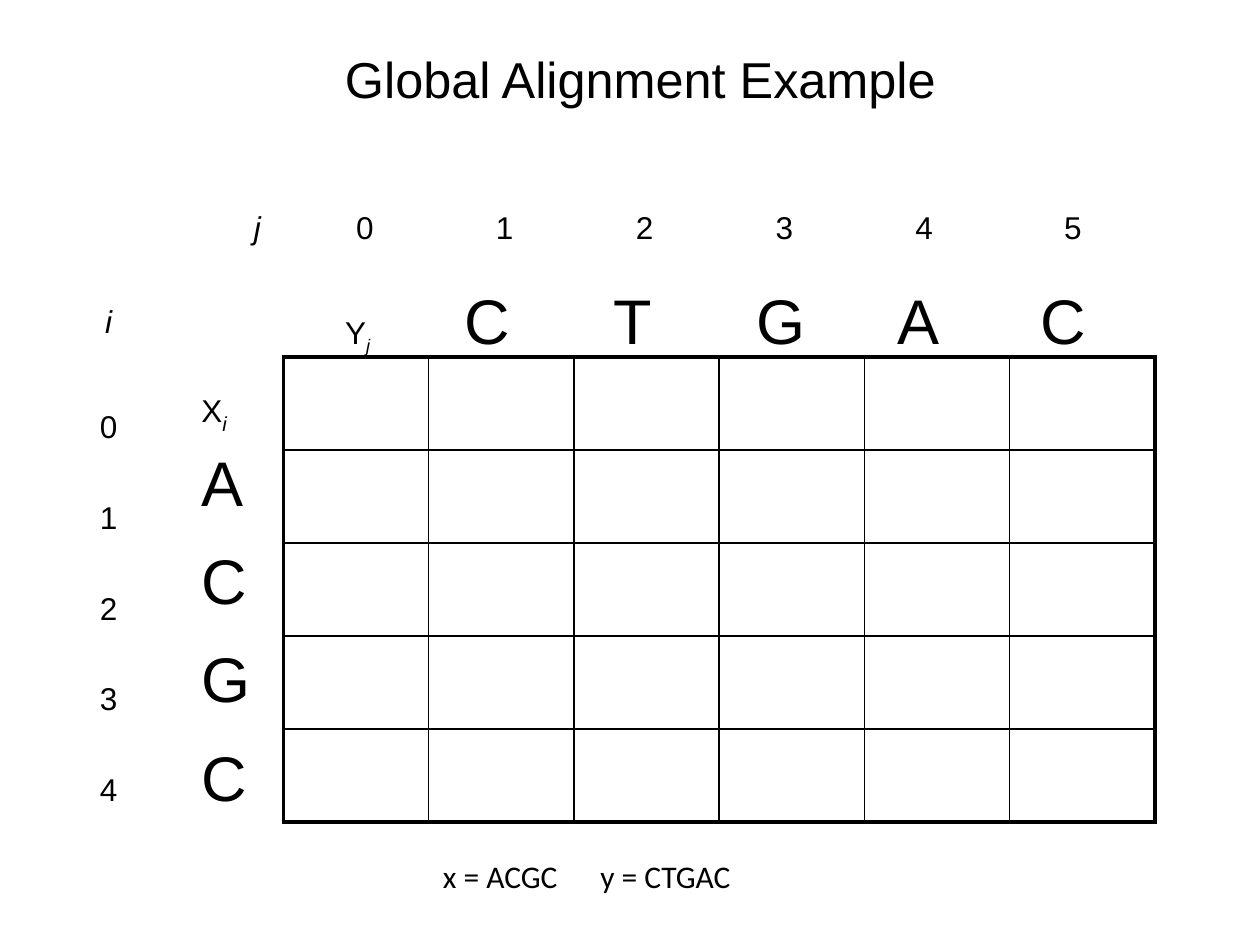
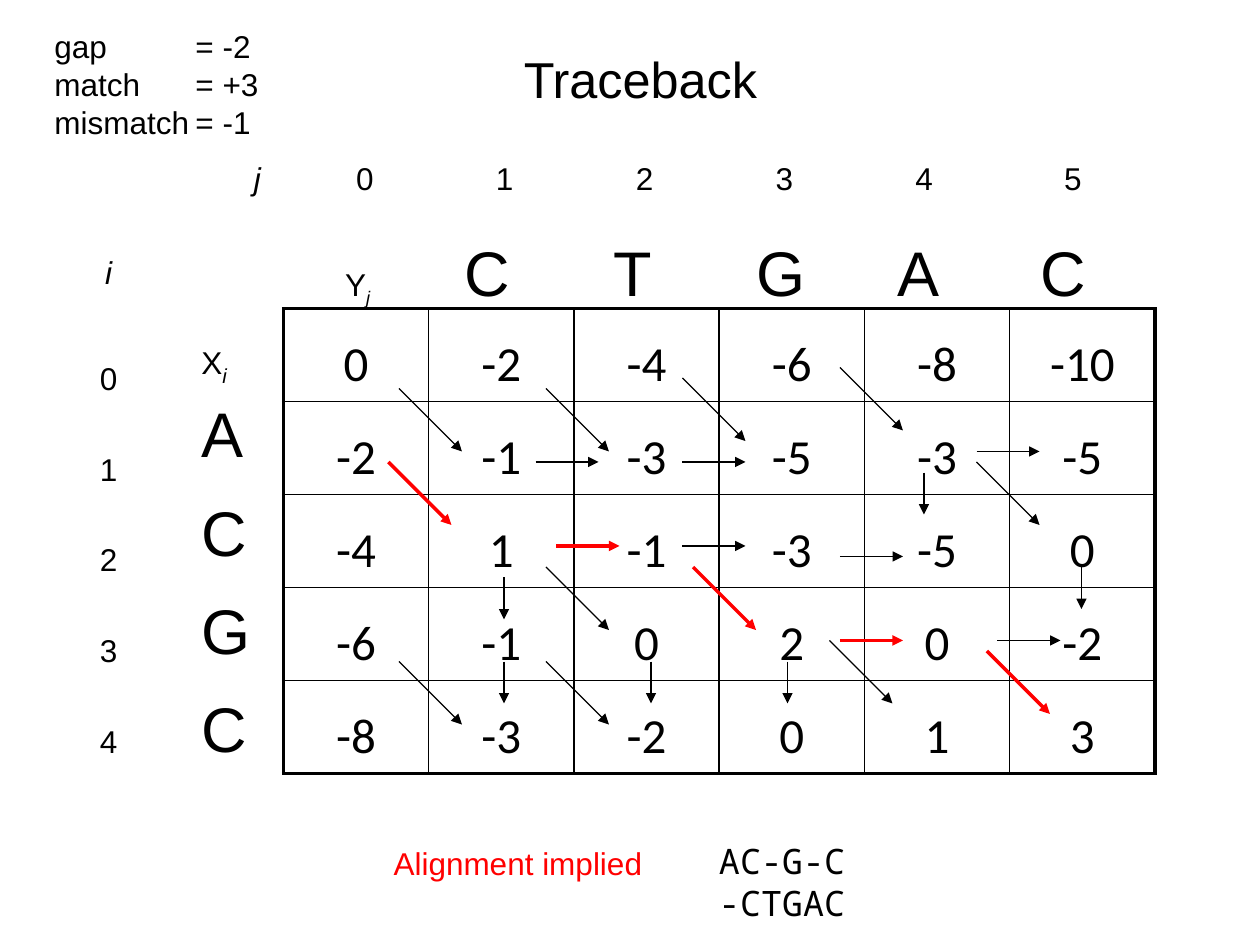
from dataclasses import dataclass

import pptx
import pptx.dml.color
import pptx.enum.shapes
import pptx.enum.text
import pptx.oxml
import pptx.oxml.ns
import pptx.util
from lxml import etree

ANCHOR = pptx.enum.text.MSO_ANCHOR
ALIGN = pptx.enum.text.PP_ALIGN


@dataclass(frozen=True)
class Theme:
    ink: str = "000000"
    accent: str = "FF0000"
    sans: str = "Arial"
    body: str = "Calibri"
    mono: str = "Noto Sans Mono"
    title: float = 28.8
    label: float = 18
    sequence: float = 20
    score: float = 28
    letter: float = 36
    frame_line: float = 2.25
    cell_line: float = 1
    step_line: float = 0.75
    trace_line: float = 2


THEME = Theme()
WIDTH, HEIGHT = pptx.util.Inches(10), pptx.util.Inches(7.5)
UNIT = WIDTH / 120  # the slide is a grid of 120 columns by 90 rows


@dataclass(frozen=True)
class Box:
    left: float
    top: float
    width: float
    height: float

    def inside(self, dx, dy, width, height):
        return Box(self.left + dx, self.top + dy, width, height)

    def emu(self):
        return [round(v * UNIT) for v in (self.left, self.top, self.width, self.height)]


TITLE = Box(10, 4, 102, 7)
X_SEQUENCE, Y_SEQUENCE = "ACGC", "CTGAC"
SCORES = [
    [0, -2, -4, -6, -8, -10],
    [-2, -1, -3, -5, -3, -5],
    [-4, 1, -1, -3, -5, 0],
    [-6, -1, 0, 2, 0, -2],
    [-8, -3, -2, 0, 1, 3],
]

# Arrow directions, in grid units
DIAGONAL, RIGHT, DOWN = (6, 6), (6, 0), (0, 4)
STEPS = {
    DIAGONAL: [(11, 8), (25, 8), (38, 7), (53, 6), (66, 15), (25, 25),
               (11, 34), (25, 34), (52, 32)],
    RIGHT: [(24, 15), (38, 15), (66, 14), (38, 23), (53, 24), (68, 32)],
    DOWN: [(61, 16), (21, 26), (76, 25), (21, 34), (35, 34), (48, 34)],
}
TRACE = {
    DIAGONAL: [(10, 15), (39, 25), (67, 33)],
    RIGHT: [(26, 23), (53, 32)],
}


def rgb(color):
    return pptx.dml.color.RGBColor.from_string(color)


def style_font(font, size, face=THEME.sans, color=THEME.ink):
    font.name, font.size = face, pptx.util.Pt(size)
    font.color.rgb = rgb(color)


def set_tabs(paragraph, stops):
    """Add (alignment, inches) tab stops; call before setting the font."""
    tabs = etree.SubElement(paragraph._p.get_or_add_pPr(), pptx.oxml.ns.qn("a:tabLst"))
    for alignment, position in stops:
        etree.SubElement(tabs, pptx.oxml.ns.qn("a:tab"),
                         pos=str(pptx.util.Inches(position)), algn=alignment)


def add_run(paragraph, text, size=None, italic=None, subscript=False):
    run = paragraph.add_run()
    run.text = text
    run.font.italic = italic
    if size:
        run.font.size = pptx.util.Pt(size)
    if subscript:
        run.font._element.set("baseline", "-25000")


def add_text(slide, box, lines, size=THEME.label, face=THEME.sans, color=THEME.ink,
             align=ALIGN.LEFT, anchor=ANCHOR.TOP, spacing=(), tabs=()):
    """Each line is a string or a list of add_run arguments."""
    frame = slide.shapes.add_textbox(*box.emu()).text_frame
    frame.word_wrap, frame.vertical_anchor = True, anchor
    for index, line in enumerate(lines):
        paragraph = frame.paragraphs[0] if index == 0 else frame.add_paragraph()
        paragraph.alignment = align
        if spacing:
            paragraph.line_spacing = spacing[index]
        if tabs:
            set_tabs(paragraph, tabs)
        style_font(paragraph.font, size, face, color)
        for parts in [(line,)] if isinstance(line, str) else line:
            add_run(paragraph, *parts)


def add_title(slide, title):
    add_text(slide, TITLE, [title], THEME.title, align=ALIGN.CENTER, anchor=ANCHOR.MIDDLE)


def add_border(cell, side, width):
    border = etree.SubElement(cell._tc.get_or_add_tcPr(), pptx.oxml.ns.qn(f"a:ln{side}"),
                              w=str(pptx.util.Pt(width)))
    fill = etree.SubElement(border, pptx.oxml.ns.qn("a:solidFill"))
    etree.SubElement(fill, pptx.oxml.ns.qn("a:srgbClr"), val=THEME.ink)


def add_score_table(slide, box, scores):
    rows, columns = len(SCORES), len(SCORES[0])
    table = slide.shapes.add_table(rows, columns, *box.emu()).table
    table.first_row = table.horz_banding = False
    for row in range(rows):
        for column in range(columns):
            cell = table.cell(row, column)
            outer = {"L": column == 0, "R": column == columns - 1,
                     "T": row == 0, "B": row == rows - 1}
            for side, is_frame in outer.items():
                add_border(cell, side, THEME.frame_line if is_frame else THEME.cell_line)
            cell.fill.background()
            if scores:
                # Scores sit a little below the middle of their cells
                cell.margin_top = pptx.util.Inches(0.2)
                cell.margin_bottom = pptx.util.Inches(0.05)
                cell.vertical_anchor = ANCHOR.MIDDLE
                paragraph = cell.text_frame.paragraphs[0]
                paragraph.alignment = ALIGN.CENTER
                style_font(paragraph.font, THEME.score, THEME.body)
                add_run(paragraph, str(scores[row][column]))


def add_matrix(slide, box, scores=None):
    # Column numbers j
    numbers = "".join(f"\t{j}" for j in range(len(Y_SEQUENCE) + 1))
    add_text(slide, box.inside(16, 0, 87, 4.4), [[("j", None, True), (numbers,)]],
             spacing=[0.9],
             tabs=[("ctr", stop) for stop in (0.88, 1.99, 3.1, 4.21, 5.32, 6.5)])
    # Letters of y
    letters = "".join(f"\t{letter}" for letter in Y_SEQUENCE)
    add_text(slide, box.inside(23, 4.5, 77, 10.6),
             [[("\tY",), ("j", None, True, True), (letters, THEME.letter)]],
             spacing=[1.3],
             tabs=[("l", 0.14)] + [("ctr", stop) for stop in (1.27, 2.42, 3.6, 4.69, 5.84)])
    # Row numbers i
    add_text(slide, box.inside(0, 3.5, 6.7, 54.5),
             [[("i", None, True)]] + [str(i) for i in range(len(X_SEQUENCE) + 1)],
             align=ALIGN.CENTER, spacing=[2.4, 2.8] + [2.4] * len(X_SEQUENCE))
    # Letters of x
    add_text(slide, box.inside(11, 15.4, 6.7, 43.5),
             [[("X",), ("i", THEME.sequence, True, True)]]
             + [[(letter, THEME.letter)] for letter in X_SEQUENCE],
             spacing=[1.3, 1.1, 1.3, 1.3, 1.3])
    add_score_table(slide, box.inside(20, 14.4, 83, 44.3), scores)


def add_arrows(slide, box, arrows, color, width):
    for (across, down), starts in arrows.items():
        for dx, dy in starts:
            left, top, run, drop = box.inside(dx, dy, across, down).emu()
            arrow = slide.shapes.add_connector(pptx.enum.shapes.MSO_CONNECTOR.STRAIGHT,
                                               left, top, left + run, top + drop)
            arrow.line.color.rgb = rgb(color)
            arrow.line.width = pptx.util.Pt(width)
            etree.SubElement(arrow.line._get_or_add_ln(), pptx.oxml.ns.qn("a:tailEnd"),
                             type="triangle")
            etree.SubElement(arrow._element.spPr, pptx.oxml.ns.qn("a:effectLst"))


def add_scoring_rules(slide, box):
    add_text(slide, box, ["gap\t= -2", "match\t= +3", "mismatch\t= -1"],
             anchor=ANCHOR.MIDDLE, tabs=[("l", 1.12)])


def add_alignment(slide, box):
    add_text(slide, box.inside(0, 0.4, 32, 4.8), ["Alignment implied"], color=THEME.accent)
    add_text(slide, box.inside(31, 0, 28.6, 9.2), ["AC-G-C", "-CTGAC"],
             THEME.sequence, THEME.mono)


def build_example(slide):
    add_title(slide, "Global Alignment Example")
    add_matrix(slide, Box(7, 19.6, 103, 59))
    add_text(slide, Box(41, 81, 45.6, 6), [f"x = {X_SEQUENCE}\ty = {Y_SEQUENCE}"],
             face=THEME.body, tabs=[("l", 1.25)])


def build_traceback(slide):
    add_title(slide, "Traceback")
    add_matrix(slide, Box(7, 15, 103, 59), SCORES)
    add_alignment(slide, Box(36.3, 79.4, 60, 9.2))
    arrow_field = Box(27, 29, 83, 44)
    add_arrows(slide, arrow_field, STEPS, THEME.ink, THEME.step_line)
    add_arrows(slide, arrow_field, TRACE, THEME.accent, THEME.trace_line)
    add_scoring_rules(slide, Box(4, 0, 24, 16))


def main():
    deck = pptx.Presentation()
    deck.slide_width, deck.slide_height = WIDTH, HEIGHT
    for build in (build_example, build_traceback):
        build(deck.slides.add_slide(deck.slide_layouts[6]))
    deck.save("out.pptx")


if __name__ == "__main__":
    main()
